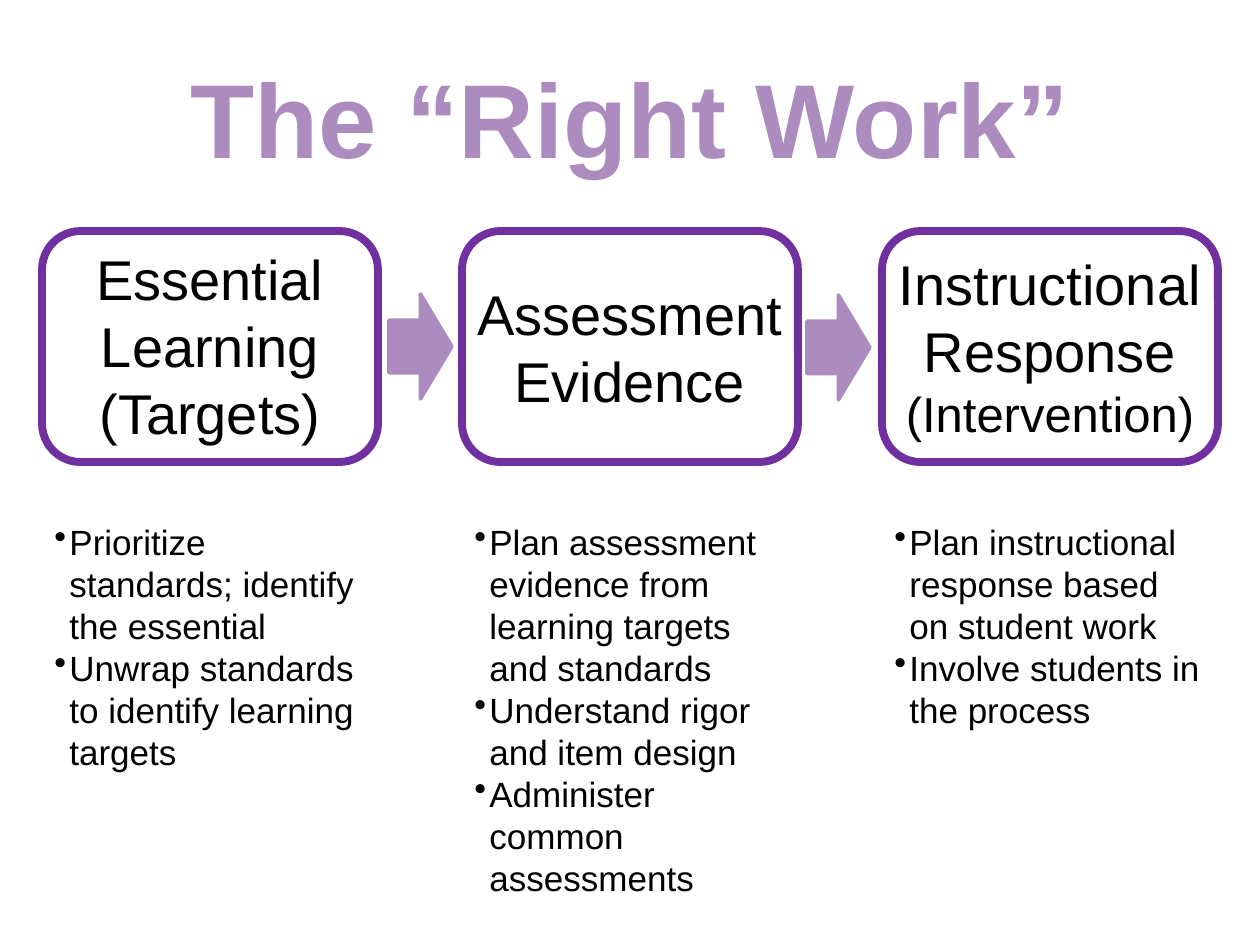
from lxml.etree import SubElement
from pptx import Presentation
from pptx.dml.color import RGBColor
from pptx.enum.shapes import MSO_SHAPE
from pptx.enum.text import MSO_ANCHOR, PP_ALIGN
from pptx.oxml.ns import qn
from pptx.util import Emu, Pt

PX = 914400 // 126
LILAC, PURPLE, BLACK = "AC8CBE", "7030A0", "000000"
COL_X, COL_STEP, COL_W = 42, 420, 336
COLUMNS = [
    (238, 217, [("Essential Learning (Targets)", 32)],
     267, ["Prioritize standards; identify the essential",
           "Unwrap standards to identify learning targets"]),
    (273, 149, [("Assessment Evidence", 32)],
     394, ["Plan assessment evidence from learning targets and standards",
           "Understand rigor and item design",
           "Administer common assessments"]),
    (243, 208, [("Instructional Response ", 32), ("(Intervention)", 28)],
     224, ["Plan instructional response based on student work",
           "Involve students in the process"]),
]
ARROWS = [(368, 315), (786, 316)]


def px(*values):
    """Turn pixels into EMU."""
    return [Emu(v * PX) for v in values]


def color(value):
    """Turn a hex string into a colour."""
    return RGBColor.from_string(value)


def add_run(p, text, size=20, fill=BLACK, bold=False):
    """Add a formatted run to a paragraph."""
    r = p.add_run()
    r.text = text
    r.font.name, r.font.size, r.font.bold = "Arial", Pt(size), bold
    r.font.color.rgb = color(fill)


def add_bullet(p, indent=15):
    """Give a paragraph a hanging bullet."""
    pPr = p._p.get_or_add_pPr()
    pPr.set("marL", str(indent * PX))
    pPr.set("indent", str(-indent * PX))
    SubElement(pPr, qn("a:buChar"), char="•")


def add_box(s, x, y, w, h):
    """Add a wrapping text box and return its text frame."""
    tf = s.shapes.add_textbox(*px(x, y, w, h)).text_frame
    tf.word_wrap = True
    return tf


def add_heading(s, x, y, h, runs):
    """Add a centred column heading."""
    p = add_box(s, x, y, COL_W, h).paragraphs[0]
    p.alignment = PP_ALIGN.CENTER
    for text, size in runs:
        add_run(p, text, size=size)


def add_list(s, x, h, items):
    """Add the bullet list of a column."""
    tf = add_box(s, x, 514, COL_W, h)
    for i, item in enumerate(items):
        p = tf.add_paragraph() if i else tf.paragraphs[0]
        add_bullet(p)
        add_run(p, item)


def add_shape(s, kind, x, y, w, h, line, width, fill=None):
    """Add an outlined preset shape."""
    sp = s.shapes.add_shape(kind, *px(x, y, w, h))
    sp.shadow.inherit = False
    sp.line.color.rgb = color(line)
    sp.line.width = Pt(width)
    if fill:
        sp.fill.solid()
        sp.fill.fore_color.rgb = color(fill)
    else:
        sp.fill.background()
    return sp


def set_title(s, text):
    """Place and format the title."""
    sp = s.shapes.title
    sp.left, sp.top, sp.width, sp.height = px(63, 38, 1134, 158)
    tf = sp.text_frame
    tf.vertical_anchor = MSO_ANCHOR.MIDDLE
    p = tf.paragraphs[0]
    p.alignment = PP_ALIGN.CENTER
    add_run(p, text, size=60, fill=LILAC, bold=True)


def main():
    """Build the slide and save it."""
    prs = Presentation()
    prs.slide_width, prs.slide_height = px(1260, 945)
    s = prs.slides.add_slide(prs.slide_layouts[5])
    set_title(s, "The “Right Work”")
    for i, (top, height, runs, list_h, items) in enumerate(COLUMNS):
        x = COL_X + i * COL_STEP
        add_heading(s, x, top, height, runs)
        add_shape(s, MSO_SHAPE.ROUNDED_RECTANGLE, x, 231, COL_W, 231, PURPLE, 4.5)
        add_list(s, x, list_h, items)
    for x, y in ARROWS:
        sp = add_shape(s, MSO_SHAPE.DOWN_ARROW, x, y, 105, 63, LILAC, 2, fill=LILAC)
        sp.rotation = 270
    prs.save("out.pptx")


main()
